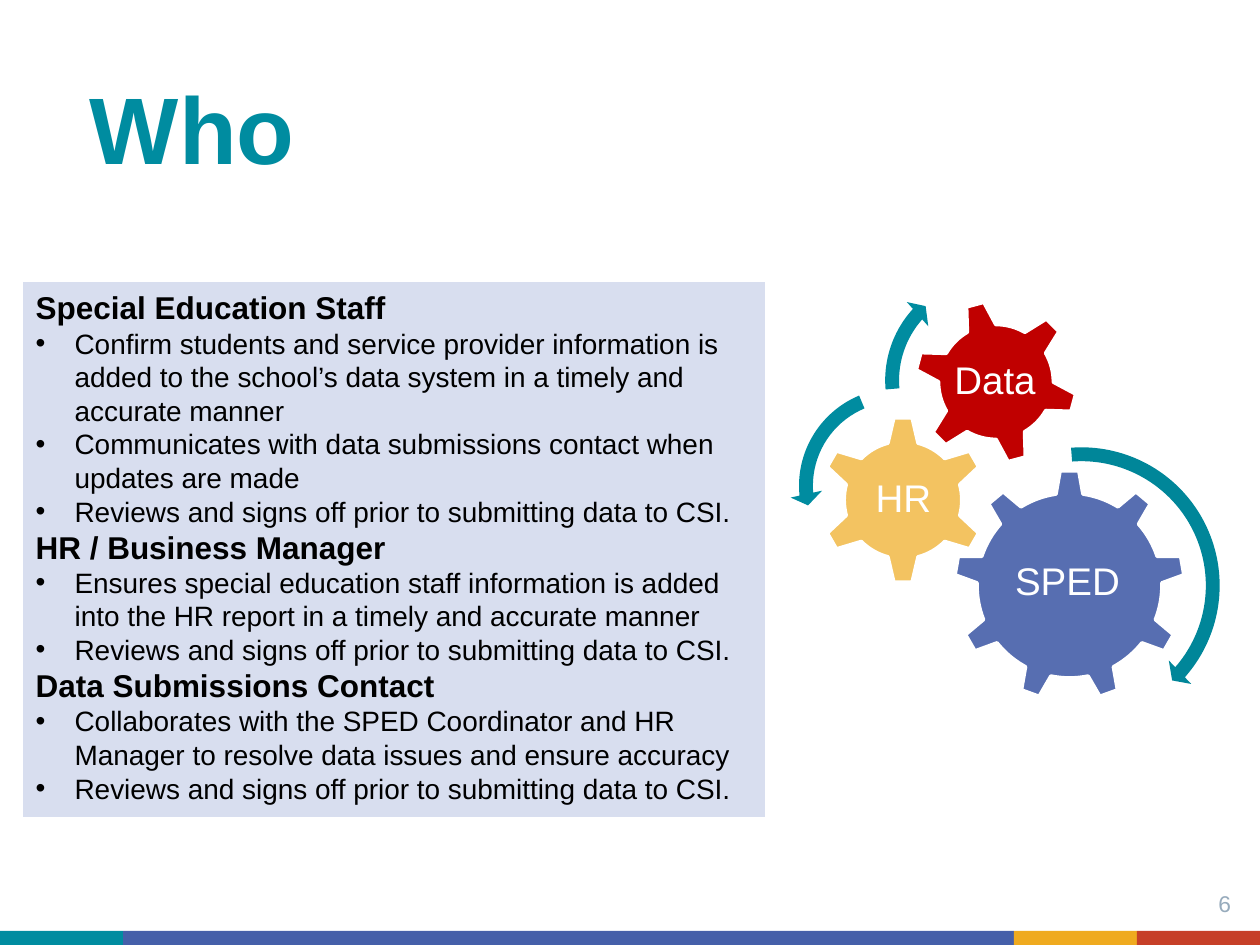
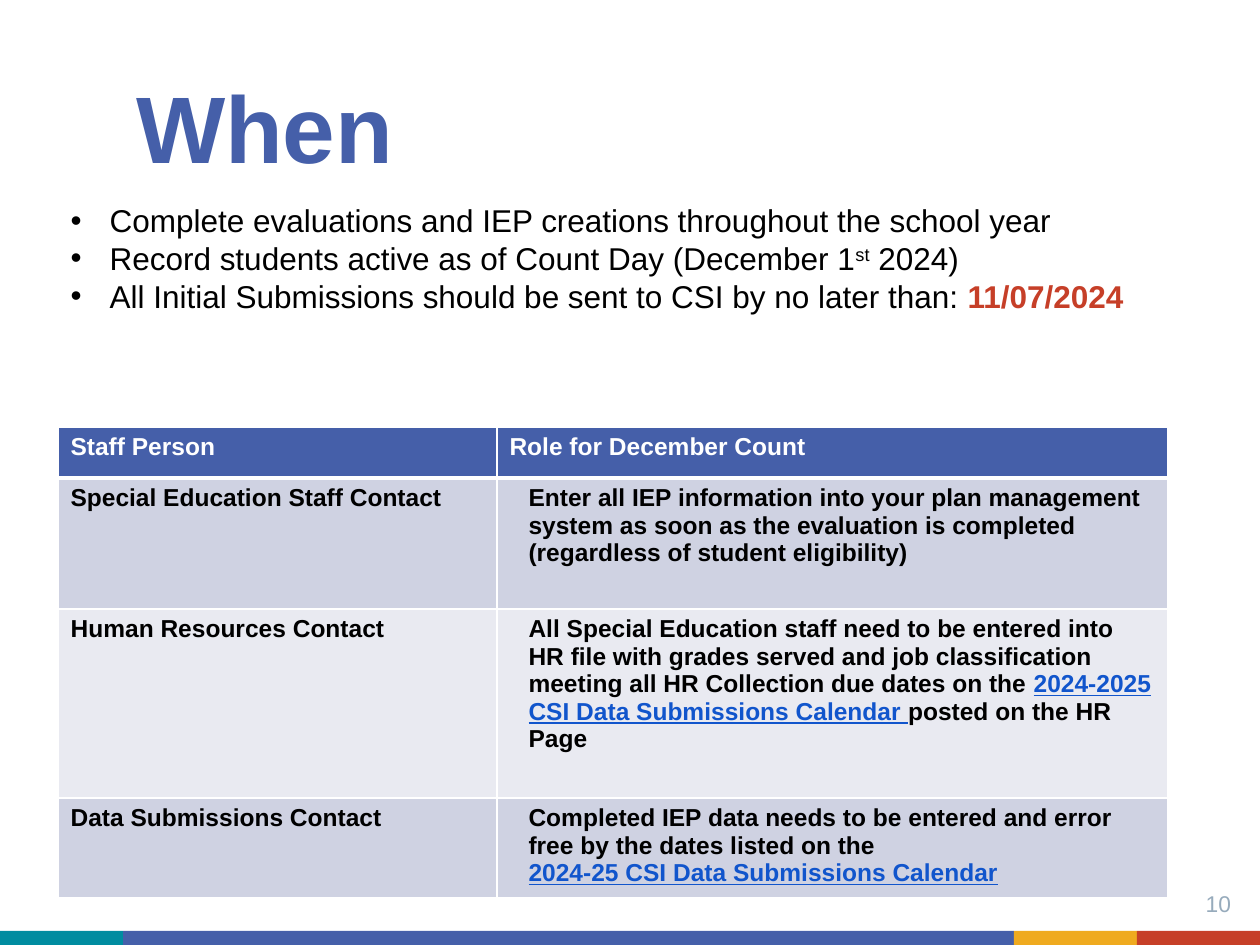
from pptx import Presentation
from pptx.dml.color import RGBColor
from pptx.enum.shapes import MSO_SHAPE as SHAPE
from pptx.enum.text import MSO_ANCHOR as ANCHOR, MSO_AUTO_SIZE as AUTOSIZE, PP_ALIGN as ALIGN
from pptx.oxml.ns import qn
from pptx.util import Emu, Pt
from lxml.etree import SubElement

PX = 914400 / 126  # EMU per px
W, H = 1260, 945

TEAL = RGBColor(0x00, 0x8C, 0xA0)
DARK_TEAL = RGBColor(0x00, 0x86, 0x99)
BLUE = RGBColor(0x45, 0x5F, 0xA9)
AMBER = RGBColor(0xEF, 0xAA, 0x1F)
BRICK = RGBColor(0xC6, 0x3F, 0x28)
RED = RGBColor(0xC0, 0x00, 0x00)
PANEL = RGBColor(0xD8, 0xDE, 0xEF)
ROW_DARK = RGBColor(0xCF, 0xD2, 0xE2)
ROW_LIGHT = RGBColor(0xE9, 0xEA, 0xF1)
LINK_BLUE = RGBColor(0x11, 0x55, 0xCC)
GREY = RGBColor(0x97, 0xAB, 0xBC)
BLACK = RGBColor(0, 0, 0)
WHITE = RGBColor(0xFF, 0xFF, 0xFF)

BANDS = [(0, 123, TEAL), (123, 891, BLUE), (1014, 123, AMBER), (1137, 123, BRICK)]
INDENT = 39

LINK = {"color": LINK_BLUE, "underline": True}
SIGN_OFF = "Reviews and signs off prior to submitting data to CSI."
DUTIES = [
    ("Special Education Staff", [
        "Confirm students and service provider information is added to the school’s "
        "data system in a timely and accurate manner",
        "Communicates with data submissions contact when updates are made",
        SIGN_OFF]),
    ("HR / Business Manager", [
        "Ensures special education staff information is added into the HR report "
        "in a timely and accurate manner",
        SIGN_OFF]),
    ("Data Submissions Contact", [
        "Collaborates with the SPED Coordinator and HR Manager to resolve data "
        "issues and ensure accuracy",
        SIGN_OFF]),
]
DATES = [
    ["Complete evaluations and IEP creations throughout the school year"],
    ["Record students active as of Count Day (December 1", ("st", {"base": 30000}), " 2024)"],
    ["All Initial Submissions should be sent to CSI by no later than: ",
     ("11/07/2024", {"color": BRICK, "bold": True})],
]
# Gear: shape, box, rotation, colour, opacity %, label, label box
GEARS = [
    (SHAPE.GEAR_9, (954, 470, 231, 231), 0, BLUE, 90, "SPED", (999, 524, 137, 118)),
    (SHAPE.GEAR_6, (819, 416, 168, 168), 0, AMBER, 70, "HR", (862, 459, 83, 83)),
    (SHAPE.GEAR_6, (914, 300, 164, 164), 345, RED, 100, "Data", (949, 336, 92, 92)),
]
# Arrow: shape, box, colour, thickness %, head, end and start in degrees, head width %
ARROWS = [
    (SHAPE.CIRCULAR_ARROW, (934, 438, 295, 295), DARK_TEAL, 4.7, (4.98, 41.34, 265.68), 5.5),
    (SHAPE.LEFT_CIRCULAR_ARROW, (790, 379, 214, 214), TEAL, 6.5, (7.17, 174.82, 247.3), 7.5),
    (SHAPE.CIRCULAR_ARROW, (876, 265, 231, 231), TEAL, 6, (6.57, 221.9, 175.14), 7),
]
COLUMNS = [439, 671]
ROWS = [51, 131, 189, 100]
HEADER = ["Staff Person", "Role for December Count"]
ROLES = [
    ("Special Education Staff Contact",
     ["Enter all IEP information into your plan management system as soon as the "
      "evaluation is completed (regardless of student eligibility)"]),
    ("Human Resources Contact",
     ["All Special Education staff need to be entered into HR file with grades served "
      "and job classification meeting all HR Collection due dates on the ",
      ("2024-2025 CSI Data Submissions Calendar ", LINK), "posted on the HR Page"]),
    ("Data Submissions Contact",
     ["Completed IEP data needs to be entered and error free by the dates listed on the ",
      None, ("2024-25 CSI Data Submissions Calendar", LINK)]),
]


def px(n):
    return Emu(round(n * PX))


def box(*lengths):
    return [px(n) for n in lengths]


def place(sp, lengths):
    sp.left, sp.top, sp.width, sp.height = box(*lengths)


def write(p, runs, size, color=BLACK, bold=False, align=ALIGN.LEFT):
    """Fill a paragraph; a run is text or (text, changes), None breaks the line."""
    p.alignment = align
    p.space_before = p.space_after = Pt(0)
    for run in runs:
        if run is None:
            p.add_line_break()
            continue
        text, changes = (run, {}) if isinstance(run, str) else run
        r = p.add_run()
        r.text = text
        values = {"name": "Arial", "size": Pt(size), "bold": bold, "color": color, **changes}
        for key, value in values.items():
            if key == "color":
                r.font.color.rgb = value
            elif key == "base":
                r._r.get_or_add_rPr().set("baseline", str(value))
            else:
                setattr(r.font, key, value)


def indent(p, left, bullet=None):
    pPr = p._p.get_or_add_pPr()
    pPr.set("marL", str(px(left)))
    pPr.set("indent", str(-px(left) if bullet else 0))
    if bullet:
        color = SubElement(pPr, qn("a:buClr"))
        SubElement(color, qn("a:srgbClr")).set("val", str(BLACK))
        SubElement(pPr, qn("a:buFont")).set("typeface", "Arial")
        SubElement(pPr, qn("a:buChar")).set("char", bullet)
    else:
        SubElement(pPr, qn("a:buNone"))


def frame(tf, inset=None, anchor=ANCHOR.TOP):
    values = {"word_wrap": True, "auto_size": AUTOSIZE.NONE, "vertical_anchor": anchor}
    if inset is not None:
        values.update({f"margin_{side}": px(inset) for side in ("left", "top", "right", "bottom")})
    for key, value in values.items():
        setattr(tf, key, value)
    return tf


def add_label(s, lengths, text, inset, anchor=ANCHOR.TOP, **style):
    tf = frame(s.shapes.add_textbox(*box(*lengths)).text_frame, inset, anchor)
    write(tf.paragraphs[0], [text], **style)
    return tf.paragraphs[0]


def add_solid(s, kind, lengths, color, opacity=100):
    sp = s.shapes.add_shape(kind, *box(*lengths))
    sp.shadow.inherit = False
    sp.fill.solid()
    sp.fill.fore_color.rgb = color
    sp.line.fill.background()
    if opacity < 100:
        clr = sp._element.spPr.find(qn("a:solidFill"))[0]
        SubElement(clr, qn("a:alpha")).set("val", str(opacity * 1000))
    return sp


def add_base_slide(prs, title, left, top, color, number):
    """Slide with bands, title and page number."""
    s = prs.slides.add_slide(prs.slide_layouts[1])
    for x, width, band_color in BANDS:
        add_solid(s, SHAPE.RECTANGLE, (x, 931, width, 14), band_color)
    place(s.shapes.title, (left, top, 891, 157))
    tf = frame(s.shapes.title.text_frame, 13, ANCHOR.BOTTOM)
    write(tf.paragraphs[0], [title], 54, color, bold=True)
    add_label(s, (1168, 877, 76, 58), str(number), 13, size=13, color=GREY, align=ALIGN.RIGHT)
    return s


def add_list(s, lengths, items):
    """Body list; an item is (runs, size, is_heading)."""
    sp = s.placeholders[1]
    place(sp, lengths)
    tf = frame(sp.text_frame)
    for i, (runs, size, heading) in enumerate(items):
        p = tf.add_paragraph() if i else tf.paragraphs[0]
        write(p, runs, size, bold=heading)
        indent(p, *((0,) if heading else (INDENT, "•")))
    return sp


def add_gear(s, kind, lengths, rotation, color, opacity, text, text_box):
    sp = add_solid(s, kind, lengths, color, opacity)
    sp.rotation = rotation
    sp.line.color.rgb = WHITE
    sp.line.width = Pt(2)
    p = add_label(s, text_box, text, 4, ANCHOR.MIDDLE, size=22, color=WHITE, align=ALIGN.CENTER)
    p.line_spacing = 0.9


def add_round_arrow(s, kind, lengths, color, thickness, angles, head_width):
    sp = add_solid(s, kind, lengths, color)
    # Angles are held in 60000ths of a degree, adjustments in 100000ths
    values = [thickness / 100, *(a * 0.6 for a in angles), head_width / 100]
    for i, value in enumerate(values):
        sp.adjustments[i] = value


def format_cell(cell, fill, bottom=1):
    tcPr = cell._tc.get_or_add_tcPr()
    for side in "LRTB":
        ln = SubElement(tcPr, qn(f"a:ln{side}"))
        ln.set("w", str(Pt(bottom if side == "B" else 1)))
        SubElement(SubElement(ln, qn("a:solidFill")), qn("a:srgbClr")).set("val", str(WHITE))
    cell.fill.solid()
    cell.fill.fore_color.rgb = fill


def add_roles_table(s, left, top):
    table = s.shapes.add_table(len(ROWS), len(COLUMNS),
                               *box(left, top, sum(COLUMNS), sum(ROWS))).table
    table.horz_banding = False
    for column, width in zip(table.columns, COLUMNS):
        column.width = px(width)
    for row, height in zip(table.rows, ROWS):
        row.height = px(height)
    for cell, text in zip(table.rows[0].cells, HEADER):
        format_cell(cell, BLUE, bottom=3)
        write(cell.text_frame.paragraphs[0], [text], 14, WHITE, bold=True)
    for i, (person, role) in enumerate(ROLES, 1):
        for j, runs in enumerate(([person], role)):
            cell = table.cell(i, j)
            format_cell(cell, ROW_DARK if i % 2 else ROW_LIGHT)
            p = cell.text_frame.paragraphs[0]
            write(p, runs, 14, bold=True)
            indent(p, 19 * j)


def main():
    prs = Presentation()
    prs.slide_width, prs.slide_height = box(W, H)

    # Who: duties panel and gears
    s = add_base_slide(prs, "Who", 77, 39, TEAL, 6)
    items = []
    for heading, duties in DUTIES:
        items.append(([heading], 18, True))
        items += [([duty], 16, False) for duty in duties]
    panel = add_list(s, (23, 282, 742, 535), items)
    panel.fill.solid()
    panel.fill.fore_color.rgb = PANEL
    for gear in GEARS:
        add_gear(s, *gear)
    for arrow in ARROWS:
        add_round_arrow(s, *arrow)

    # When: dates and roles table
    s = add_base_slide(prs, "When", 123, 38, BLUE, 10)
    add_list(s, (58, 195, 1132, 127), [(runs, 18, False) for runs in DATES])
    add_roles_table(s, 58, 427)

    prs.save("out.pptx")


if __name__ == "__main__":
    main()
